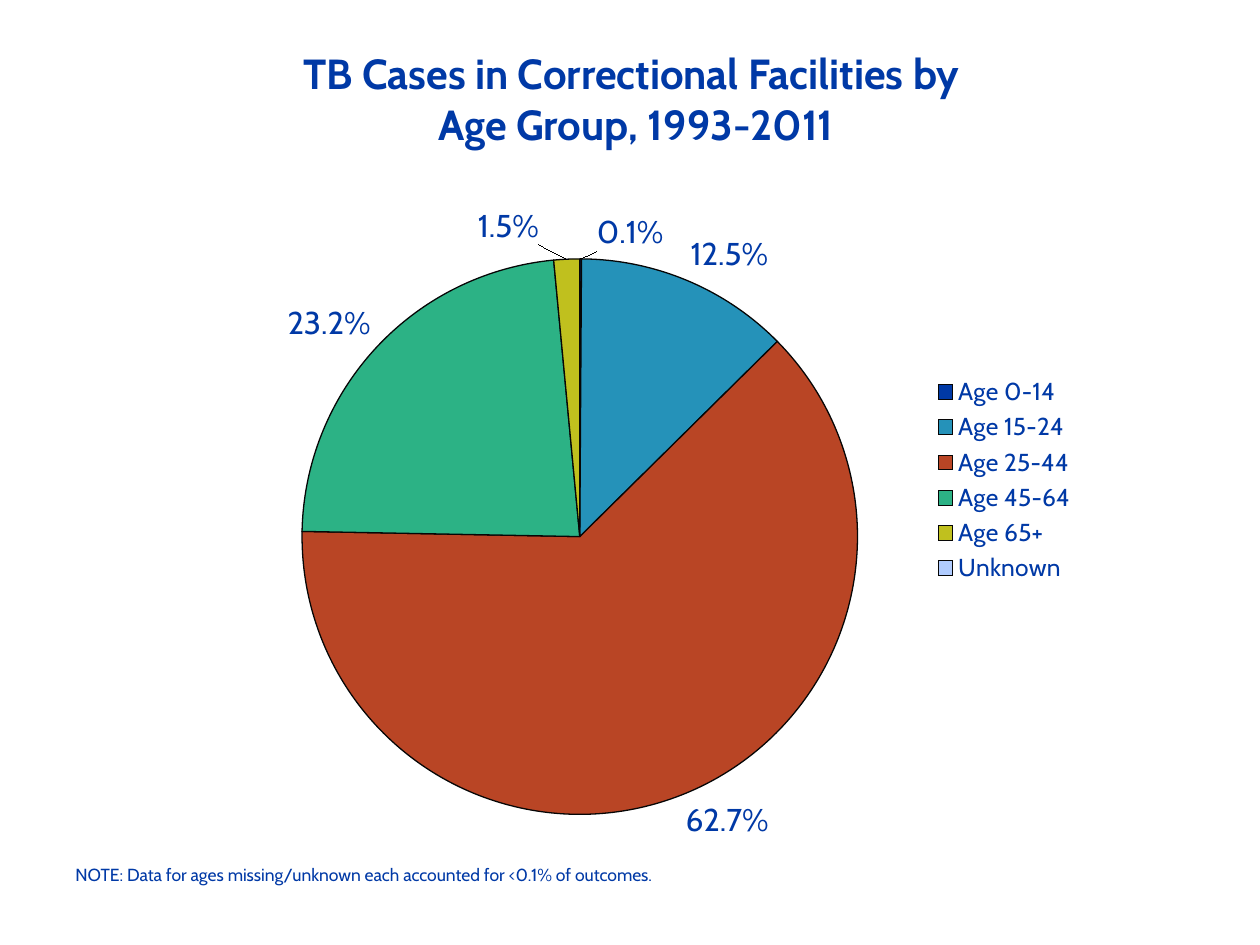
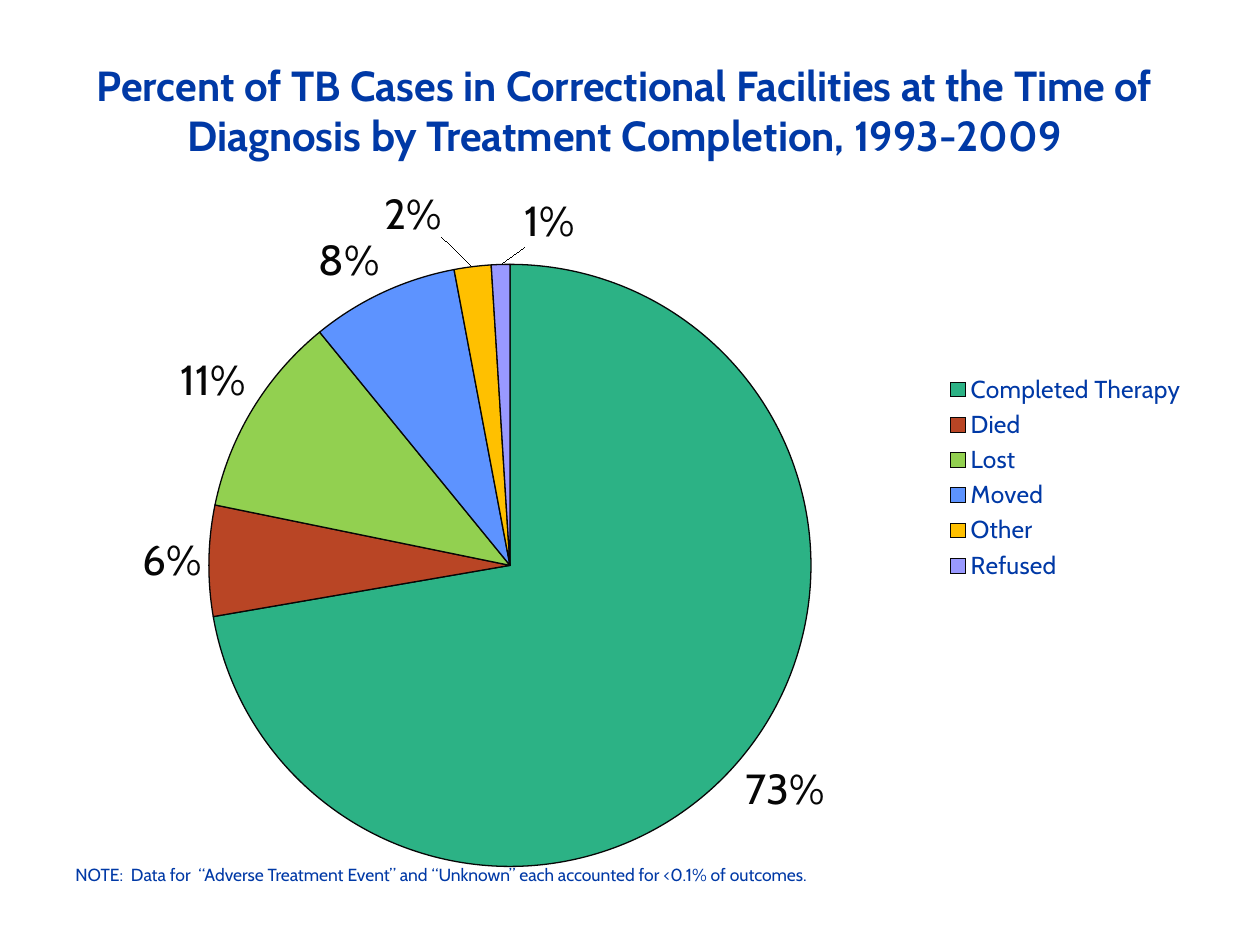
from copy import deepcopy
from dataclasses import dataclass

from pptx import Presentation
from pptx.chart.data import CategoryChartData
from pptx.dml.color import RGBColor
from pptx.enum.chart import XL_CHART_TYPE as ChartType
from pptx.enum.chart import XL_LABEL_POSITION as LabelPosition
from pptx.enum.chart import XL_LEGEND_POSITION as LegendPosition
from pptx.enum.text import PP_ALIGN as Align
from pptx.oxml import parse_xml
from pptx.oxml.ns import nsdecls, qn
from pptx.util import Cm, Pt


@dataclass(frozen=True)
class Theme:
    font: str = "Cabin"
    navy: str = "0039A6"
    black: str = "060606"
    blue: str = "2592B9"
    rust: str = "B94525"
    green: str = "2CB285"
    olive: str = "C0C01E"
    pale: str = "B0CCFF"
    lime: str = "92D050"
    sky: str = "5D93FF"
    amber: str = "FFC000"
    violet: str = "9999FF"
    title_size: int = 24
    legend_size: int = 14
    note_size: int = 10
    outline: float = 0.75


def style_font(font, theme, size, color, bold=False):
    font.name = theme.font
    font.size = Pt(size)
    font.bold = bold
    font.color.rgb = RGBColor.from_string(color)


def write_text(frame, text, theme, size, color, bold=False, align=Align.LEFT):
    frame.word_wrap = True
    for number, line in enumerate(text.split("\n")):
        para = frame.add_paragraph() if number else frame.paragraphs[0]
        para.alignment = align
        span = para.add_run()
        span.text = line
        style_font(span.font, theme, size, color, bold)


def set_layout(parent, index, **fractions):
    for old in parent.findall(qn("c:layout")):
        parent.remove(old)
    modes = ""
    if "w" in fractions:
        modes = '<c:layoutTarget val="inner"/>'
    if parent.tag != qn("c:dLbl"):
        modes += '<c:xMode val="edge"/><c:yMode val="edge"/>'
    values = "".join(f'<c:{key} val="{value:.4f}"/>' for key, value in fractions.items())
    parent.insert(index, parse_xml(
        f'<c:layout {nsdecls("c")}><c:manualLayout>{modes}{values}</c:manualLayout></c:layout>'))


class PieDeck:
    """Builds slides that each hold a title, a pie chart and a note."""

    def __init__(self, theme):
        self.theme = theme
        self.deck = Presentation()
        self.deck.slide_width, self.deck.slide_height = Cm(25.4), Cm(19.05)
        self.page = None

    def add_page(self):
        self.page = self.deck.slides.add_slide(self.deck.slide_layouts[6])

    def add_text(self, text, left, top, width, height, **style):
        box = self.page.shapes.add_textbox(Cm(left), Cm(top), Cm(width), Cm(height))
        write_text(box.text_frame, text, self.theme, color=self.theme.navy, **style)

    def add_title(self, text, left, top):
        self.add_text(text, left, top, 23.5, 2.31, size=self.theme.title_size,
                      bold=True, align=Align.CENTER)

    def add_note(self, text):
        self.add_text(text, 1.27, 17.3, 23.2, 0.69, size=self.theme.note_size)

    def add_pie(self, slices, frame, pie, legend_at, number_format,
                label_size, label_color, label_shifts):
        theme = self.theme
        left, top, width, height = frame
        data = CategoryChartData()
        data.categories = [name for name, _, _ in slices]
        data.add_series("Series 1", [value for _, value, _ in slices])
        chart = self.page.shapes.add_chart(
            ChartType.PIE, *(Cm(length) for length in frame), data).chart
        chart.has_title = False
        style_font(chart.font, theme, theme.note_size, theme.navy)

        chart.has_legend = True
        chart.legend.position = LegendPosition.RIGHT
        chart.legend.include_in_layout = False
        style_font(chart.legend.font, theme, theme.legend_size, theme.navy)
        set_layout(chart.element.xpath(".//c:legend")[0], 1,
                   x=(legend_at[0] - left) / width, y=(legend_at[1] - top) / height)

        pie_left, pie_top, diameter = pie
        set_layout(chart.element.xpath(".//c:plotArea")[0], 0,
                   x=(pie_left - left) / width, y=(pie_top - top) / height,
                   w=diameter / width, h=diameter / height)

        chart.plots[0].vary_by_categories = True
        series = chart.plots[0].series[0]
        for index, (_, _, color) in enumerate(slices):
            look = series.points[index].format
            look.fill.solid()
            look.fill.fore_color.rgb = RGBColor.from_string(color)
            look.line.color.rgb = RGBColor.from_string(theme.black)
            look.line.width = Pt(theme.outline)

        labels = series.data_labels
        labels.show_value = True
        labels.number_format = number_format
        labels.number_format_is_linked = False
        labels.position = LabelPosition.OUTSIDE_END
        style_font(labels.font, theme, label_size, label_color)
        for index, (right, down) in label_shifts.items():
            label = series.points[index].data_label
            label.position = LabelPosition.OUTSIDE_END
            style_font(label.font, theme, label_size, label_color)
            element = chart.element.xpath(f'.//c:dLbl[c:idx/@val="{index}"]')[0]
            set_layout(element, 1, x=right / width, y=down / height)
            source = chart.element.xpath(".//c:ser/c:dLbls/c:numFmt")[0]
            element.insert(2, deepcopy(source))


def main():
    theme = Theme()
    show = PieDeck(theme)

    show.add_page()
    show.add_title("TB Cases in Correctional Facilities by \nAge Group, 1993-2011", 1.07, 0.84)
    ages = [
        ("Age 0-14", 0.1, theme.navy),
        ("Age 15-24", 12.5, theme.blue),
        ("Age 25-44", 62.7, theme.rust),
        ("Age 45-64", 23.2, theme.green),
        ("Age 65+", 1.5, theme.olive),
        ("Unknown", None, theme.pale),
    ]
    show.add_pie(ages, frame=(1.57, 3.96, 22.43, 13.54), pie=(6.09, 5.22, 11.2),
                 legend_at=(18.75, 7.5), number_format='0.0"%"',
                 label_size=18, label_color=theme.navy,
                 label_shifts={0: (1, 0), 4: (-1.17, -0.14)})
    show.add_note("NOTE: Data for ages missing/unknown each accounted for <0.1% of outcomes.")

    show.add_page()
    show.add_title("Percent of TB Cases in Correctional Facilities at the Time of "
                   "Diagnosis by Treatment Completion, 1993-2009", 0.84, 1.07)
    outcomes = [
        ("Completed Therapy", 73, theme.green),
        ("Died", 6, theme.rust),
        ("Lost", 11, theme.lime),
        ("Moved", 8, theme.sky),
        ("Other", 2, theme.amber),
        ("Refused", 1, theme.violet),
    ]
    show.add_pie(outcomes, frame=(0.99, 3.81, 23.39, 14.1), pie=(4.21, 5.33, 12.14),
                 legend_at=(19, 7.45), number_format='0"%"',
                 label_size=24, label_color=theme.black,
                 label_shifts={4: (-0.6, -0.45), 5: (1, -0.2)})
    show.add_note("NOTE:  Data for  “Adverse Treatment Event” and “Unknown” "
                  "each accounted for <0.1% of outcomes.")

    show.deck.save("out.pptx")


if __name__ == "__main__":
    main()
